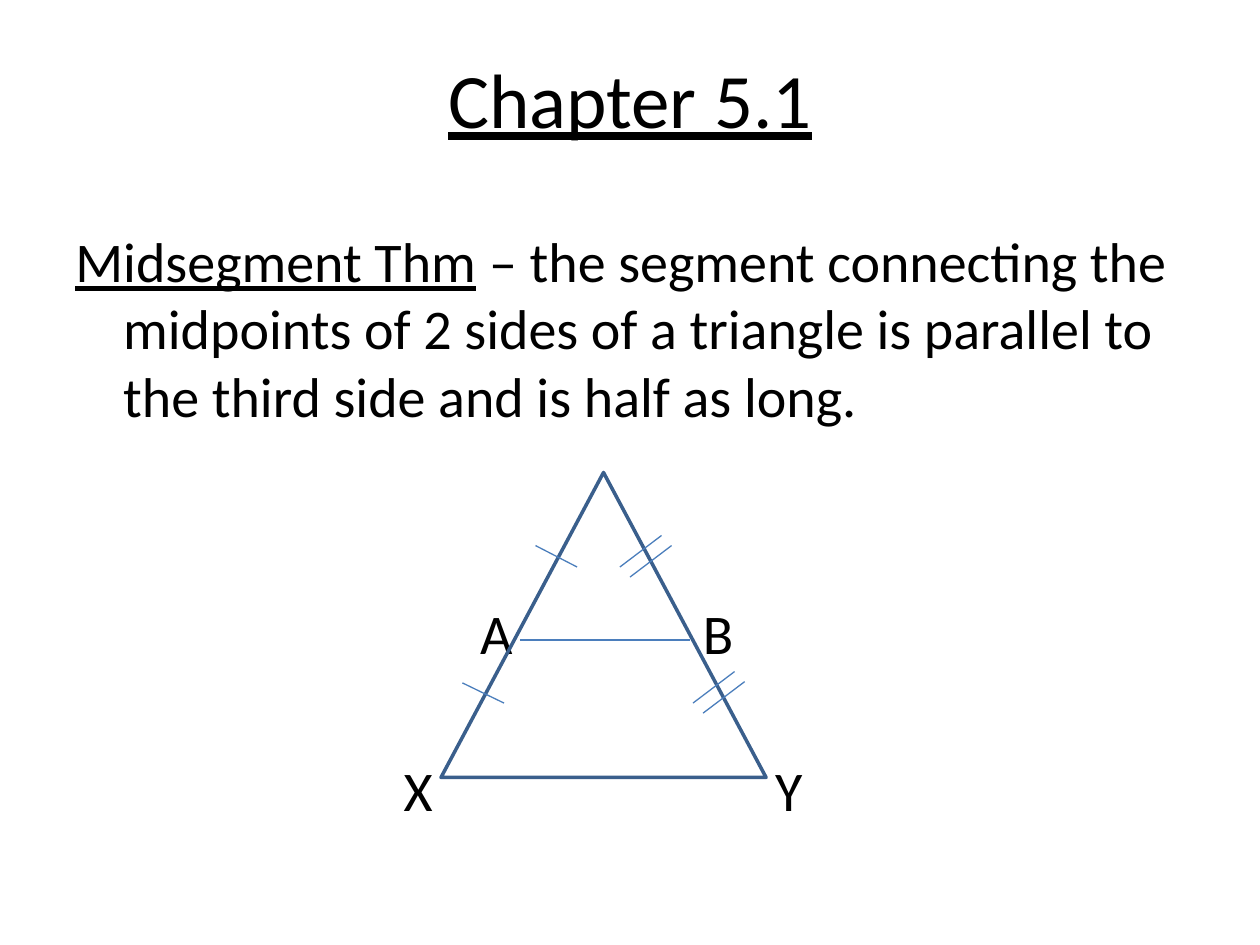
from dataclasses import dataclass

from lxml import etree
from pptx import Presentation
from pptx.dml.color import RGBColor
from pptx.enum.shapes import MSO_CONNECTOR, MSO_SHAPE
from pptx.enum.text import MSO_ANCHOR, PP_ALIGN
from pptx.oxml.ns import qn
from pptx.util import Inches, Pt

BLACK = RGBColor(0x00, 0x00, 0x00)
OUTLINE = RGBColor(0x3A, 0x5F, 0x8C)
SEGMENT = RGBColor(0x4B, 0x7E, 0xBC)
STRAIGHT = MSO_CONNECTOR.STRAIGHT
TRIANGLE = MSO_SHAPE.ISOSCELES_TRIANGLE
MIDDLE = MSO_ANCHOR.MIDDLE
CENTER = PP_ALIGN.CENTER
FONT = "Calibri"


@dataclass(frozen=True)
class PointLabel:
    letter: str
    center: float
    top: float


@dataclass(frozen=True)
class Segment:
    x1: float
    y1: float
    x2: float
    y2: float


POINT_LABELS = [
    PointLabel("A", 3.94, 4.75),
    PointLabel("B", 5.7, 4.75),
    PointLabel("X", 3.32, 6),
    PointLabel("Y", 6.26, 6),
]
MIDSEGMENT = Segment(4.13, 5.08, 5.48, 5.08)
SINGLE_TICKS = [Segment(4.25, 4.33, 4.58, 4.5), Segment(3.67, 5.42, 4, 5.58)]
DOUBLE_TICKS = [
    Segment(x + shift, y + shift, x + shift + 0.33, y + shift - 0.25)
    for x, y in [(4.92, 4.5), (5.5, 5.58)]
    for shift in (0, 0.08)
]


def add_text(slide, left: float, top: float, width: float, height: float, size: int):
    frame = slide.shapes.add_textbox(
        Inches(left), Inches(top), Inches(width), Inches(height)
    ).text_frame
    frame.word_wrap = True
    paragraph = frame.paragraphs[0]
    paragraph.font.name = FONT
    paragraph.font.size = Pt(size)
    paragraph.font.color.rgb = BLACK
    return frame, paragraph


def add_title(slide) -> None:
    frame, title = add_text(slide, 0.5, 0.3, 9, 0.95, 44)
    frame.vertical_anchor = MIDDLE
    title.text = "Chapter 5.1"
    title.alignment = CENTER
    title.font.underline = True


def add_theorem(slide) -> None:
    _, theorem = add_text(slide, 0.5, 1.75, 9, 1.75, 32)
    name = theorem.add_run()
    name.text = "Midsegment Thm"
    name.font.underline = True
    theorem.add_run().text = (
        " – the segment connecting the midpoints of 2 sides of a triangle"
        " is parallel to the third side and is half as long."
    )
    properties = theorem._p.get_or_add_pPr()
    properties.set("marL", str(Inches(0.38)))
    properties.set("indent", str(Inches(-0.38)))


def add_point_label(slide, label: PointLabel) -> None:
    width = 0.4
    frame, point = add_text(
        slide, label.center - width / 2, label.top, width, 0.54, 32
    )
    frame.margin_left = frame.margin_right = 0
    frame.margin_top = frame.margin_bottom = 0
    point.text = label.letter
    point.alignment = CENTER


def add_triangle(slide) -> None:
    triangle = slide.shapes.add_shape(
        TRIANGLE, Inches(3.5), Inches(3.75), Inches(2.58), Inches(2.42)
    )
    triangle.shadow.inherit = False
    triangle.fill.background()
    triangle.line.color.rgb = OUTLINE
    triangle.line.width = Pt(2)


def add_segment(slide, segment: Segment) -> None:
    line = slide.shapes.add_connector(
        STRAIGHT,
        Inches(segment.x1),
        Inches(segment.y1),
        Inches(segment.x2),
        Inches(segment.y2),
    )
    line.line.color.rgb = SEGMENT
    line.line.width = Pt(0.75)
    etree.SubElement(line._element.spPr, qn("a:effectLst"))


def main() -> None:
    presentation = Presentation()
    presentation.slide_width = Inches(10)
    presentation.slide_height = Inches(7.5)
    slide = presentation.slides.add_slide(presentation.slide_layouts[6])

    add_title(slide)
    add_theorem(slide)
    for label in POINT_LABELS:
        add_point_label(slide, label)
    add_triangle(slide)
    for segment in [MIDSEGMENT, *SINGLE_TICKS, *DOUBLE_TICKS]:
        add_segment(slide, segment)

    presentation.save("out.pptx")


if __name__ == "__main__":
    main()
